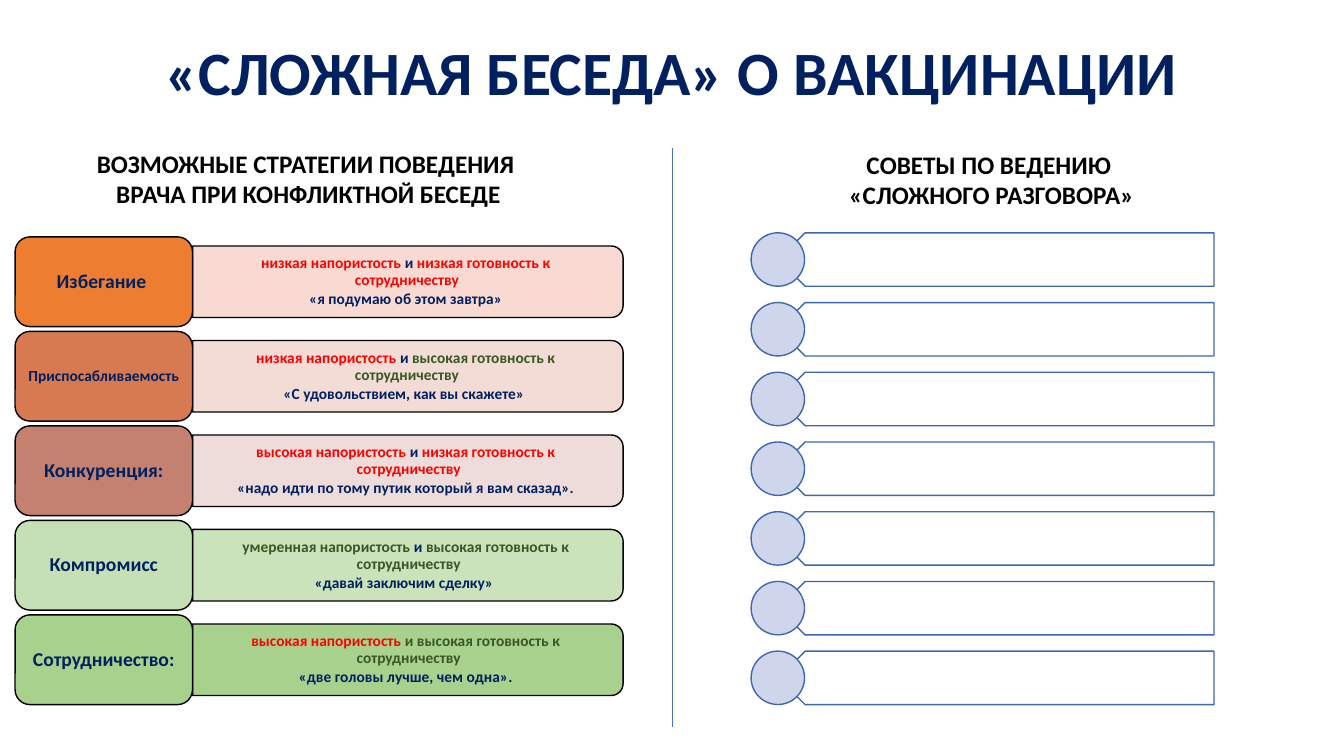
from dataclasses import dataclass

from lxml.etree import SubElement
from pptx import Presentation
from pptx.dml.color import RGBColor
from pptx.enum.shapes import MSO_CONNECTOR as Connector, MSO_SHAPE as Shape
from pptx.enum.text import MSO_ANCHOR as Anchor, MSO_AUTO_SIZE as AutoSize, PP_ALIGN as Align
from pptx.oxml.ns import qn
from pptx.util import Inches, Pt


@dataclass(frozen=True)
class Theme:
    font: str = "Calibri"
    navy: str = "002060"
    black: str = "000000"
    white: str = "FFFFFF"
    red: str = "FF0000"
    green: str = "385723"
    tip_line: str = "3E67B2"
    tip_dot: str = "CFD5EA"
    divider: str = "4472C4"
    title_size: int = 44
    heading_size: int = 18
    tag_size: int = 14
    small_size: int = 11


THEME = Theme()


def write_text(frame, paragraphs, *, size, color=THEME.navy, anchor=Anchor.TOP,
               insets=(0.1, 0.05), wrap=True, spacing=None, after=None, hanging=None):
    """Fill a frame with paragraphs, each a list of (text, color) runs or a string."""
    frame.word_wrap = wrap
    frame.auto_size = AutoSize.NONE if wrap else AutoSize.SHAPE_TO_FIT_TEXT
    frame.vertical_anchor = anchor
    frame.margin_left = frame.margin_right = Inches(insets[0])
    frame.margin_top = frame.margin_bottom = Inches(insets[1])
    for index, runs in enumerate(paragraphs):
        paragraph = frame.add_paragraph() if index else frame.paragraphs[0]
        paragraph.alignment = Align.CENTER
        if spacing:
            paragraph.line_spacing = spacing
        if after:
            paragraph.space_after = Pt(after)
        if hanging:
            properties = paragraph._p.get_or_add_pPr()
            properties.set("marL", str(Inches(hanging)))
            properties.set("indent", str(-Inches(hanging)))
        for text, run_color in ([(runs, color)] if isinstance(runs, str) else runs):
            run = paragraph.add_run()
            run.text = text
            run.font.name = THEME.font
            run.font.size = Pt(size)
            run.font.bold = True
            run.font.color.rgb = RGBColor.from_string(run_color)


class SlideBuilder:
    def __init__(self, slide, theme):
        self.slide = slide
        self.theme = theme
        self.shapes = slide.shapes

    def start_group(self):
        self.shapes = self.slide.shapes.add_group_shape().shapes

    def end_group(self):
        self.shapes = self.slide.shapes

    def text(self, left, top, width, height, paragraphs, **text_format):
        box = self.shapes.add_textbox(Inches(left), Inches(top), Inches(width), Inches(height))
        write_text(box.text_frame, paragraphs, **text_format)

    def shape(self, kind, left, top, width, height, fill, line, rotation=0, opacity=100):
        shape = self.shapes.add_shape(kind, Inches(left), Inches(top),
                                      Inches(width), Inches(height))
        shape.shadow.inherit = False
        shape.rotation = rotation
        shape.fill.solid()
        shape.fill.fore_color.rgb = RGBColor.from_string(fill)
        shape.line.color.rgb = RGBColor.from_string(line)
        shape.line.width = Pt(1)
        if opacity < 100:
            color = shape._element.spPr.find(qn("a:solidFill"))[0]
            SubElement(color, qn("a:alpha")).set("val", str(opacity * 1000))
        return shape

    def line(self, x1, y1, x2, y2, color, width):
        connector = self.shapes.add_connector(Connector.STRAIGHT, Inches(x1), Inches(y1),
                                              Inches(x2), Inches(y2))
        connector.line.color.rgb = RGBColor.from_string(color)
        connector.line.width = Pt(width)
        SubElement(connector._element.spPr, qn("a:effectLst"))

    def strategy(self, top, name, name_size, tag_fill, bar_fill, opacity, description):
        tag_left, tag_width, tag_height = 0.15, 1.76, 0.89
        bar_left, bar_length, bar_height = 1.91, 4.27, 0.71
        middle = top + tag_height / 2
        # The bar is an upright shape turned a quarter, so its right corners are round
        self.shape(Shape.ROUND_2_SAME_RECTANGLE,
                   bar_left + (bar_length - bar_height) / 2, middle - bar_length / 2,
                   bar_height, bar_length, bar_fill, self.theme.black,
                   rotation=90, opacity=opacity)
        self.text(bar_left, middle - 0.32, 4.23, 0.64, description,
                  size=self.theme.small_size, anchor=Anchor.MIDDLE, insets=(0.27, 0.14),
                  spacing=0.9, after=1.65, hanging=0.06)
        tag = self.shape(Shape.ROUNDED_RECTANGLE, tag_left, top, tag_width, tag_height,
                         tag_fill, self.theme.black)
        write_text(tag.text_frame, [name], size=name_size, anchor=Anchor.MIDDLE,
                   insets=(0.05, 0.03), spacing=0.9)

    def tip(self, top):
        size = 0.53
        self.shape(Shape.PENTAGON, 7.72, top, 4.32, size,
                   self.theme.white, self.theme.tip_line, rotation=180)
        self.shape(Shape.OVAL, 7.45, top, size, size, self.theme.tip_dot, self.theme.tip_line)


RED, GREEN, NAVY = THEME.red, THEME.green, THEME.navy

# Name, name size, tag fill, bar fill, bar opacity, description
STRATEGIES = [
    ("Избегание ", THEME.tag_size, "ED7D31", "F8D7CE", 90,
     [[("низкая напористость ", RED), ("и ", NAVY),
       ("низкая готовность к сотрудничеству ", RED)],
      "«я подумаю об этом завтра»"]),
    ("Приспосабливаемость", THEME.small_size, "D87A51", "F2D8D2", 90,
     [[("низкая напористость ", RED), ("и", NAVY),
       (" высокая готовность к сотрудничеству ", GREEN)],
      "«С удовольствием, как вы скажете» "]),
    ("Конкуренция:", THEME.tag_size, "C48170", "EDD9D7", 90,
     [[("высокая напористость ", RED), ("и ", NAVY),
       ("низкая готовность к сотрудничеству", RED)],
      " «надо идти по тому путик который я вам сказад». "]),
    ("Компромисс", THEME.tag_size, "C5E0B4", "C5E0B4", 90,
     [[("умеренная напористость ", GREEN), ("и", NAVY),
       (" высокая готовность к сотрудничеству", GREEN)],
      "«давай заключим сделку» "]),
    ("Сотрудничество:", THEME.tag_size, "A9D18E", "A9D18E", 100,
     [[("высокая напористость ", RED), ("и высокая готовность к сотрудничеству", GREEN)],
      " «две головы лучше, чем одна». "]),
]
TIP_COUNT = 7


def main():
    presentation = Presentation()
    presentation.slide_width = Inches(13.33)
    presentation.slide_height = Inches(7.5)
    slide = presentation.slides.add_slide(presentation.slide_layouts[6])
    builder = SlideBuilder(slide, THEME)
    heading = dict(size=THEME.heading_size, color=THEME.black, wrap=False)

    # Title
    builder.text(0.15, 0.02, 13.03, 1.45, ["«СЛОЖНАЯ БЕСЕДА» О ВАКЦИНАЦИИ"],
                 size=THEME.title_size, anchor=Anchor.MIDDLE, spacing=0.9)

    # Strategies on the left
    builder.text(0.84, 1.42, 4.44, 0.71,
                 ["ВОЗМОЖНЫЕ СТРАТЕГИИ ПОВЕДЕНИЯ ", "ВРАЧА ПРИ КОНФЛИКТНОЙ БЕСЕДЕ"], **heading)
    builder.start_group()
    first, last = 2.35, 6.1
    for index, strategy in enumerate(STRATEGIES):
        builder.strategy(first + index * (last - first) / (len(STRATEGIES) - 1), *strategy)

    # Empty tips on the right
    builder.start_group()
    first, last = 2.31, 6.46
    for index in range(TIP_COUNT):
        builder.tip(first + index * (last - first) / (TIP_COUNT - 1))
    builder.end_group()
    builder.text(8.31, 1.43, 3.05, 0.71,
                 ["СОВЕТЫ ПО ВЕДЕНИЮ ", "«СЛОЖНОГО РАЗГОВОРА»"], **heading)

    # Divider
    builder.line(6.67, 1.47, 6.67, 7.21, THEME.divider, 0.5)

    presentation.save("out.pptx")


if __name__ == "__main__":
    main()
